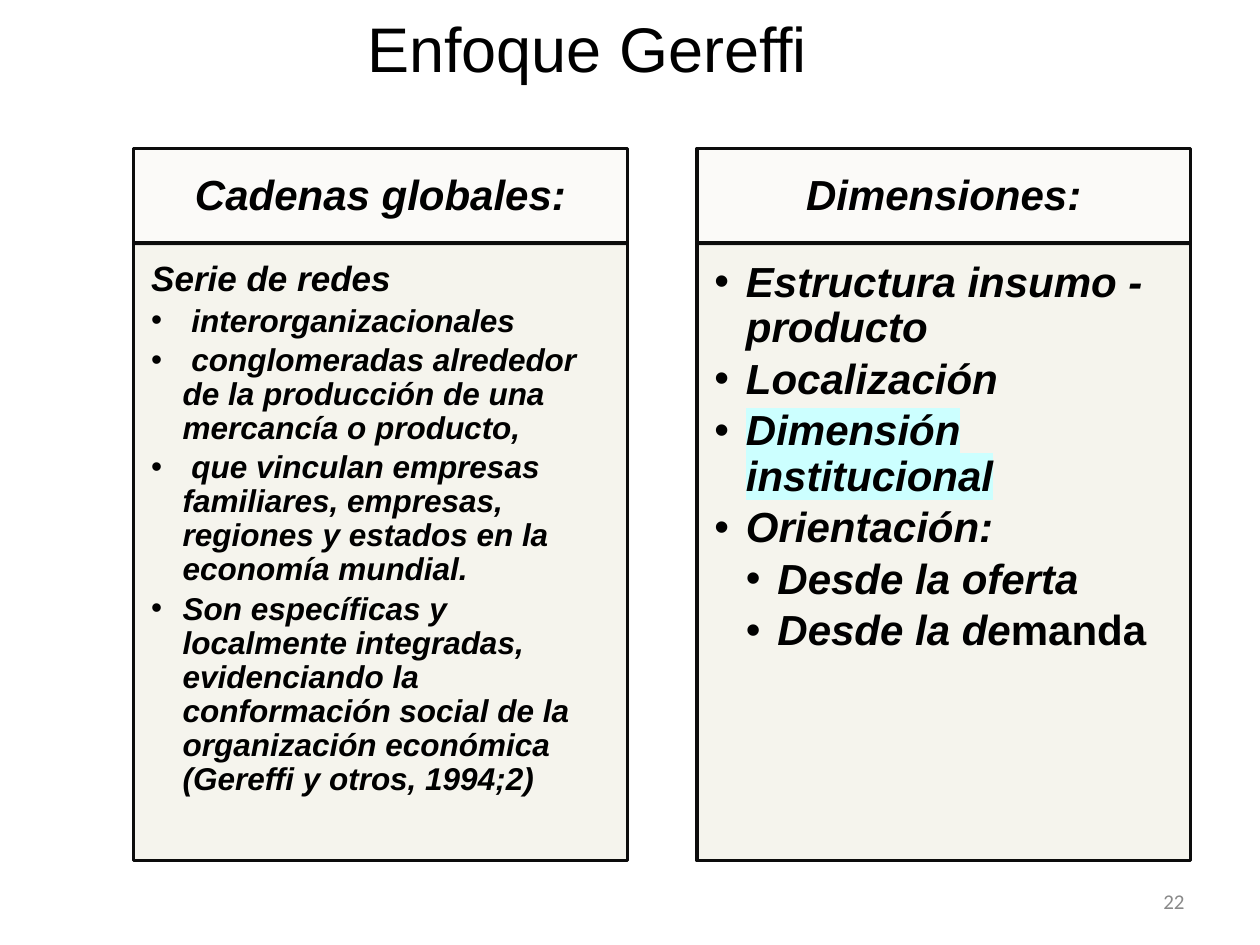
from dataclasses import dataclass

from lxml.etree import SubElement
from pptx import Presentation
from pptx.dml.color import RGBColor
from pptx.enum.shapes import MSO_SHAPE
from pptx.enum.text import MSO_ANCHOR, PP_ALIGN
from pptx.oxml.ns import qn
from pptx.util import Inches, Pt

INK = "000000"
EDGE = "0C0C0C"
WIDE = 3.92
TOP = 1.18
HEAD = 0.76
BODY = 4.9
PADS = ("left", "top", "right", "bottom")


@dataclass
class Run:
    text: str
    italic: bool = True
    mark: str = ""


@dataclass
class Item:
    runs: list[Run]
    size: float = 24
    gap: float = 3.6
    level: int = 1
    dot: bool = True


@dataclass
class Panel:
    left: float
    title: str
    items: list[Item]


PANELS = [
    Panel(1.06, "Cadenas globales:", [
        Item([Run("Serie de redes")], 20, 0, dot=False),
        Item([Run(" interorganizacionales")], 18),
        Item([Run(" conglomeradas alrededor de la producción de una "
                  "mercancía o producto,")], 18, 3),
        Item([Run(" que vinculan empresas familiares, empresas, regiones "
                  "y estados en la economía mundial.")], 18, 3),
        Item([Run("Son específicas y localmente integradas, evidenciando la "
                  "conformación social de la organización económica "
                  "(Gereffi y otros, 1994;2)")], 18, 3),
    ]),
    Panel(5.53, "Dimensiones:", [
        Item([Run("Estructura insumo - producto")], gap=0),
        Item([Run("Localización")]),
        Item([Run("Dimensión institucional", mark="CCFFFF")]),
        Item([Run("Orientación:")]),
        Item([Run("Desde la oferta")], level=2),
        Item([Run("Desde la de"), Run("manda", italic=False)], level=2),
    ]),
]


def color(code: str) -> RGBColor:
    return RGBColor.from_string(code)


def style(run, shade: str = INK, **form) -> None:
    """Set font values on a run."""
    for key, val in form.items():
        setattr(run.font, key, val)
    run.font.color.rgb = color(shade)


def frame(shape, pads: tuple, anchor):
    """Prepare the text frame of a shape."""
    text = shape.text_frame
    form = {f"margin_{side}": Inches(pad) for side, pad in zip(PADS, pads)}
    form |= {"word_wrap": True, "vertical_anchor": anchor}
    for key, val in form.items():
        setattr(text, key, val)
    return text


def label(slide, box: tuple, text: str, align, **form) -> None:
    shape = slide.shapes.add_textbox(*map(Inches, box))
    para = frame(shape, (0.1, 0.05, 0.1, 0.05), MSO_ANCHOR.MIDDLE).paragraphs[0]
    para.alignment = align
    run = para.add_run()
    run.text = text
    style(run, **form)


def block(slide, box: tuple, fill: str, alpha: int = 100):
    """Draw an outlined rectangle, see-through below 100 percent."""
    shape = slide.shapes.add_shape(MSO_SHAPE.RECTANGLE, *map(Inches, box))
    shape.shadow.inherit = False
    shape.fill.solid()
    shape.fill.fore_color.rgb = color(fill)
    shape.line.color.rgb = color(EDGE)
    shape.line.width = Pt(2)
    if alpha < 100:
        tint = shape._element.spPr.find(qn("a:solidFill"))[0]
        SubElement(tint, qn("a:alpha"), val=str(alpha * 1000))
    return shape


def write(para, item: Item) -> None:
    """Fill a paragraph with the runs of an item."""
    para.line_spacing = 0.9
    para.space_before = Pt(item.gap)
    for part in item.runs:
        run = para.add_run()
        run.text = part.text
        style(run, name="Arial", size=Pt(item.size), bold=True,
              italic=part.italic)
        if part.mark:
            props = run._r.get_or_add_rPr()
            glow = SubElement(props, qn("a:highlight"))
            SubElement(glow, qn("a:srgbClr"), val=part.mark)
            props.find(qn("a:solidFill")).addnext(glow)


def indent(para, item: Item) -> None:
    """Hang the first line and add the bullet."""
    para.alignment = PP_ALIGN.LEFT
    para.level = item.level
    props = para._p.get_or_add_pPr()
    props.set("marL", str(Inches(0.25 * item.level)))
    props.set("indent", str(Inches(-0.25)))
    if item.dot:
        tint = SubElement(props, qn("a:buClr"))
        SubElement(tint, qn("a:srgbClr"), val=INK)
        SubElement(props, qn("a:buFont"), typeface="Arial")
        SubElement(props, qn("a:buChar"), char="•")
    else:
        SubElement(props, qn("a:buNone"))


def draw(slide, panel: Panel) -> None:
    # Heading
    top = block(slide, (panel.left, TOP, WIDE, HEAD), "FBFAF8")
    para = frame(top, (0.19, 0.11, 0.19, 0.11), MSO_ANCHOR.MIDDLE).paragraphs[0]
    para.alignment = PP_ALIGN.CENTER
    write(para, Item([Run(panel.title)], gap=0))

    # List
    body = block(slide, (panel.left, TOP + HEAD - 0.01, WIDE, BODY),
                 "F4F3EC", 90)
    text = frame(body, (0.14, 0.14, 0.19, 0.21), MSO_ANCHOR.TOP)
    for num, item in enumerate(panel.items):
        para = text.add_paragraph() if num else text.paragraphs[0]
        write(para, item)
        indent(para, item)


def main() -> None:
    deck = Presentation()
    deck.slide_width, deck.slide_height = Inches(10), Inches(7.5)
    slide = deck.slides.add_slide(deck.slide_layouts[6])

    # Title
    label(slide, (0.7, 0, 7.92, 0.75), "Enfoque Gereffi", PP_ALIGN.CENTER,
          name="Arial", size=Pt(36))

    # Panels
    for panel in PANELS:
        draw(slide, panel)

    # Page number
    label(slide, (7.17, 6.95, 2.33, 0.4), "22", PP_ALIGN.RIGHT,
          shade="898989", name="Calibri", size=Pt(12))

    deck.save("out.pptx")


if __name__ == "__main__":
    main()
